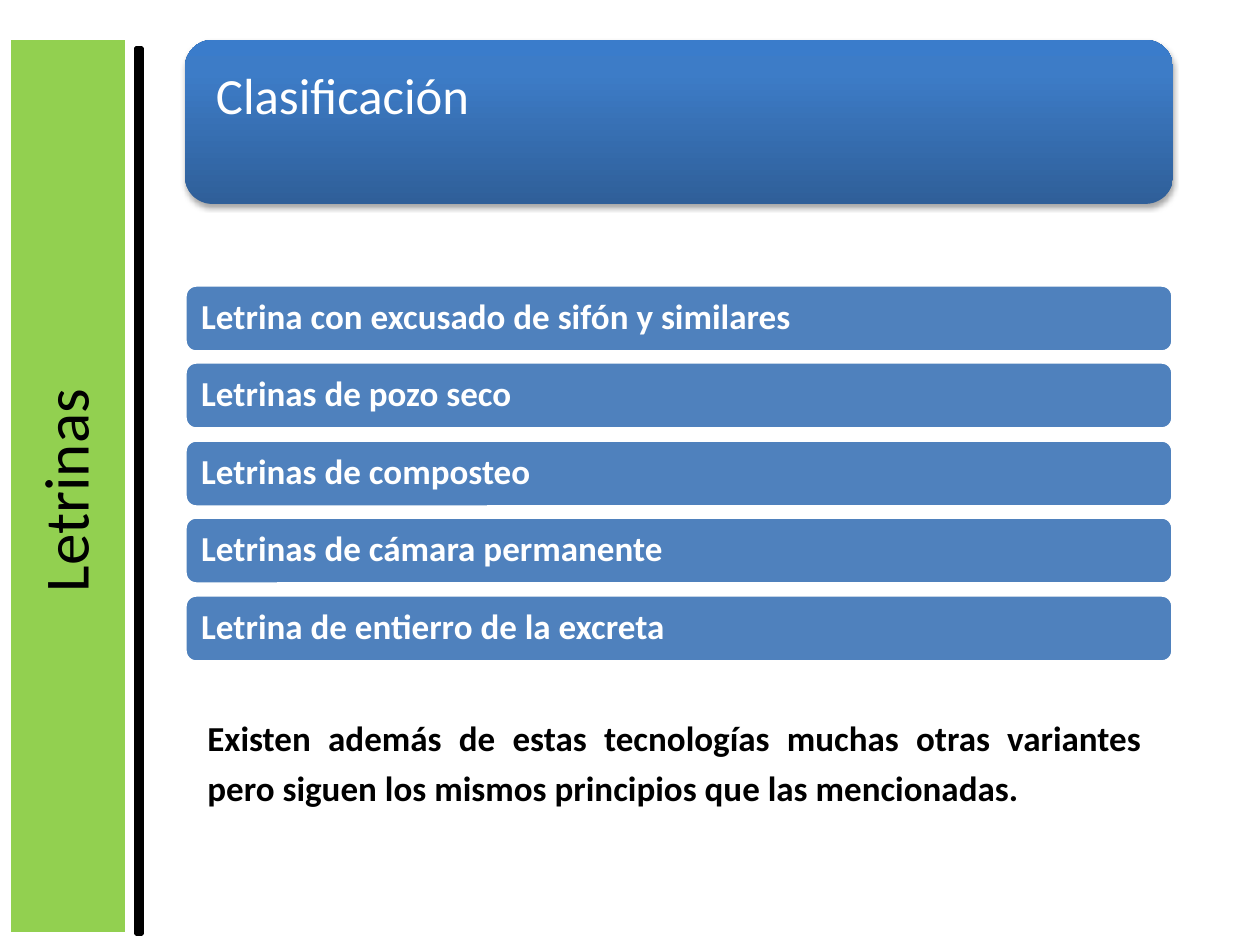
"""Build the slide that classifies latrines."""
from copy import deepcopy

from lxml import etree
from pptx import Presentation
from pptx.dml.color import RGBColor
from pptx.enum.shapes import MSO_SHAPE
from pptx.enum.text import MSO_ANCHOR, PP_ALIGN
from pptx.oxml.ns import qn
from pptx.util import Pt

PX = 914400 / 126
RECTANGLE, ROUNDED = MSO_SHAPE.RECTANGLE, MSO_SHAPE.ROUNDED_RECTANGLE
TOP, MIDDLE = MSO_ANCHOR.TOP, MSO_ANCHOR.MIDDLE
LEFT, CENTER, JUSTIFY = PP_ALIGN.LEFT, PP_ALIGN.CENTER, PP_ALIGN.JUSTIFY
COLORS = {
    "green": "92D050", "black": "000000", "white": "FFFFFF", "bar": "4F81BD",
    "header_bottom": "2F5F99", "header_middle": "3D7CC7", "header_top": "3A7CCB",
}


def add_block(kind, box, fill, line):
    shape = slide.shapes.add_shape(kind, *[round(value * PX) for value in box])
    shape.shadow.inherit = False
    shape.fill.solid()
    shape.fill.fore_color.rgb = RGBColor.from_string(COLORS[fill])
    if line:
        shape.line.color.rgb = RGBColor.from_string(COLORS[line])
        shape.line.width = Pt(2)
    else:
        shape.line.fill.background()
    return shape


def write_text(shape, text, color, frame_format, paragraph_format, font_format):
    frame = shape.text_frame
    frame.word_wrap = True
    paragraph = frame.paragraphs[0]
    run = paragraph.add_run()
    run.text = text
    run.font.name = "Calibri"
    run.font.color.rgb = RGBColor.from_string(COLORS[color])
    for target, values in ((frame, frame_format), (paragraph, paragraph_format), (run.font, font_format)):
        for name, value in values.items():
            setattr(target, name, value)


presentation = Presentation()
presentation.slide_width = round(1260 * PX)
presentation.slide_height = round(945 * PX)
slide = presentation.slides.add_slide(presentation.slide_layouts[6])

add_block(RECTANGLE, (9, 38, 118, 896), "green", "white")
add_block(RECTANGLE, (136, 48, 6, 886), "black", "black")

side_title = slide.shapes.add_textbox(*[round(value * PX) for value in (-318, 408, 840, 165)])
side_title.rotation = 270
write_text(side_title, "Letrinas", "black", {"vertical_anchor": TOP}, {"alignment": CENTER}, {"size": Pt(36)})

header = add_block(ROUNDED, (185, 40, 988, 164), "header_top", None)
header.fill.gradient()
header.fill.gradient_angle = 90
stop_list = header.element.spPr.find(qn("a:gradFill")).find(qn("a:gsLst"))
stop_list.append(deepcopy(stop_list[-1]))
header_stops = ((0, "header_bottom"), (0.8, "header_middle"), (1, "header_top"))
for stop, (position, color) in zip(header.fill.gradient_stops, header_stops):
    stop.position = position
    stop.color.rgb = RGBColor.from_string(COLORS[color])

effects = header.element.spPr.find(qn("a:effectLst"))
shadow = etree.SubElement(
    effects, qn("a:outerShdw"), blurRad=str(Pt(3.1)), dist=str(Pt(1.8)), dir="5400000", rotWithShape="0")
shadow_color = etree.SubElement(shadow, qn("a:srgbClr"), val=COLORS["black"])
etree.SubElement(shadow_color, qn("a:alpha"), val="35000")

header_margin = round(23 * PX)
write_text(
    header, "Clasificación", "white",
    {"vertical_anchor": TOP, "margin_left": header_margin, "margin_top": header_margin},
    {"alignment": LEFT, "line_spacing": 0.9}, {"size": Pt(29)})

latrine_types = (
    "Letrina con excusado de sifón y similares",
    "Letrinas de pozo seco",
    "Letrinas de composteo",
    "Letrinas de cámara permanente",
    "Letrina de entierro de la excreta",
)
for index, latrine_type in enumerate(latrine_types):
    bar = add_block(ROUNDED, (185, 285 + index * 155 // 2, 988, 67), "bar", "white")
    write_text(
        bar, latrine_type, "white",
        {"vertical_anchor": MIDDLE, "margin_left": round(13 * PX)},
        {"alignment": LEFT, "line_spacing": 0.9}, {"size": Pt(20), "bold": True})

closing_note = slide.shapes.add_textbox(*[round(value * PX) for value in (195, 702, 959, 115)])
write_text(
    closing_note,
    "Existen además de estas tecnologías muchas otras variantes pero siguen los mismos principios que las mencionadas.",
    "black", {"vertical_anchor": TOP}, {"alignment": JUSTIFY, "line_spacing": 1.2},
    {"size": Pt(20), "bold": True})

presentation.save("out.pptx")
